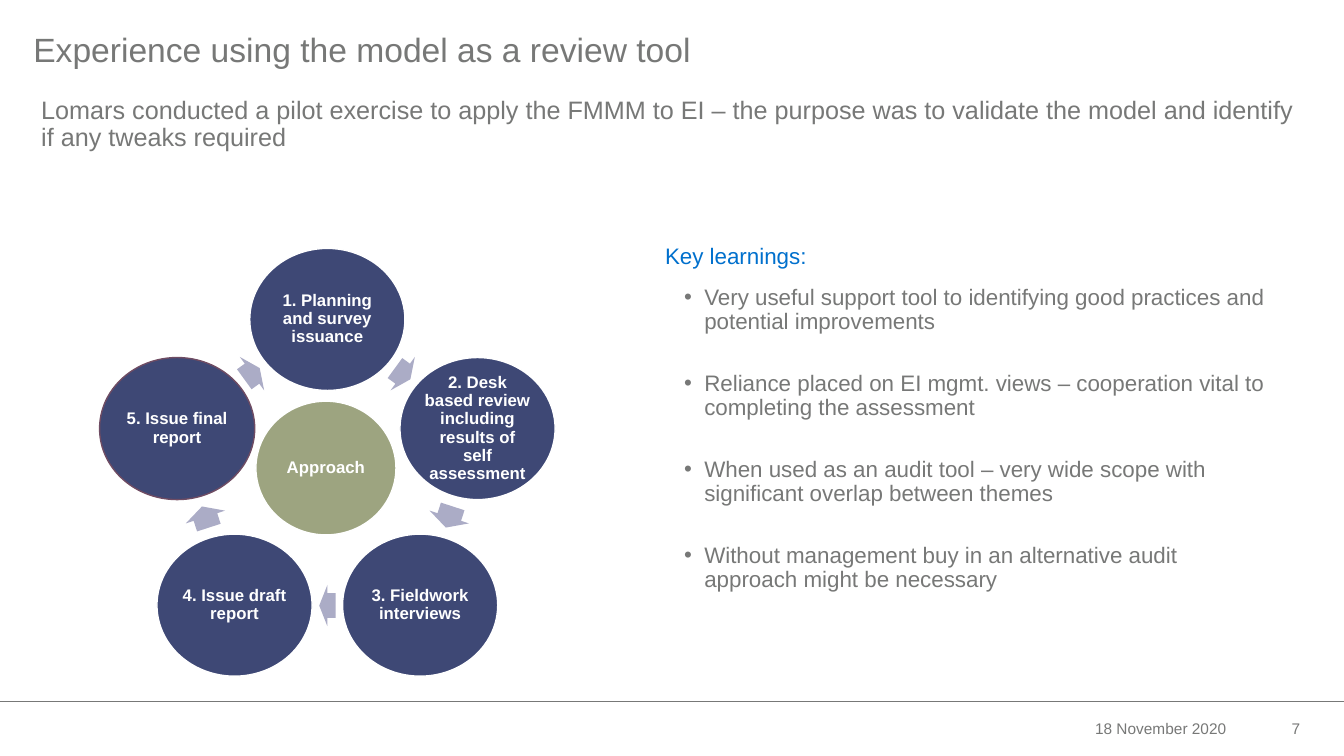
import dataclasses
import math

import pptx
import pptx.dml.color
import pptx.enum.shapes
import pptx.enum.text
import pptx.oxml
import pptx.oxml.ns
import pptx.util
from pptx.util import Cm

Align = pptx.enum.text.PP_ALIGN
Anchor = pptx.enum.text.MSO_ANCHOR
Preset = pptx.enum.shapes.MSO_SHAPE

GREY, BLUE, NAVY = "777877", "0070CD", "3E4875"
LILAC, SAGE, PLUM, WHITE = "ABACC6", "9DA480", "6F4C63", "FFFFFF"
SLIDE_WIDTH, SLIDE_HEIGHT = 33.87, 19.05
FOOTER_TOP, FOOTER_HEIGHT = 17.68, 1.35
CYCLE_X, CYCLE_Y = 8.25, 12.03
STEP_RADIUS, ARROW_RADIUS = 3.98, 3.23
STEP_WIDTH, STEP_HEIGHT = 3.91, 3.58
ARROW_HEIGHT = 1.04


@dataclasses.dataclass(frozen=True)
class Frame:
    """Position and size in centimetres."""
    left: float
    top: float
    width: float
    height: float

    def lengths(self) -> tuple:
        return Cm(self.left), Cm(self.top), Cm(self.width), Cm(self.height)


@dataclasses.dataclass(frozen=True)
class Line:
    """One paragraph and its format."""
    text: str
    size: float
    color: str = GREY
    bold: bool = False
    align: Align = Align.LEFT
    spacing: float = 0.9
    before: float = 0
    bullet: bool = False


@dataclasses.dataclass(frozen=True)
class Step:
    """A stage of the cycle and the length of the arrow that leaves it."""
    text: str
    arrow_length: float
    outline: str = WHITE


STEPS = [
    Step("1. Planning and survey issuance", 0.48),
    Step("2. Desk based review including results of self assessment", 0.56),
    Step("3. Fieldwork interviews", 0.41),
    Step("4. Issue draft report", 0.56),
    Step("5. Issue final report", 0.48, PLUM),
]
LEARNINGS = [
    "Very useful support tool to identifying good practices and potential improvements",
    "Reliance placed on EI mgmt. views – cooperation vital to completing the assessment",
    "When used as an audit tool – very wide scope with significant overlap between themes",
    "Without management buy in an alternative audit approach might be necessary",
]


def color(code: str) -> pptx.dml.color.RGBColor:
    return pptx.dml.color.RGBColor.from_string(code)


def apply(target, values: dict) -> None:
    for name, value in values.items():
        setattr(target, name, value)


def add_bullet(para) -> None:
    properties = para._p.get_or_add_pPr()
    properties.set("marL", str(Cm(0.99)))
    properties.set("indent", str(Cm(-0.51)))
    namespace = pptx.oxml.ns.nsdecls("a")
    for markup in (f'<a:buFont {namespace} typeface="Arial"/>',
                   f'<a:buChar {namespace} char="•"/>'):
        properties.append(pptx.oxml.parse_xml(markup))


def write(shape, lines: list[Line], insets: tuple, anchor: Anchor = Anchor.TOP) -> None:
    """Fill a shape with lines; insets are left, top, right, bottom in centimetres."""
    frame = shape.text_frame
    sides = ("margin_left", "margin_top", "margin_right", "margin_bottom")
    apply(frame, {"word_wrap": True, "vertical_anchor": anchor,
                  "auto_size": pptx.enum.text.MSO_AUTO_SIZE.NONE}
          | {side: Cm(inset) for side, inset in zip(sides, insets)})
    for index, line in enumerate(lines):
        para = frame.add_paragraph() if index else frame.paragraphs[0]
        if line.bullet:
            add_bullet(para)
        apply(para, {"alignment": line.align, "line_spacing": line.spacing,
                     "space_before": pptx.util.Pt(line.before)})
        span = para.add_run()
        span.text = line.text
        apply(span.font, {"name": "Arial", "size": pptx.util.Pt(line.size), "bold": line.bold})
        span.font.color.rgb = color(line.color)


def add_text(page, frame: Frame, lines: list[Line], insets: tuple,
             anchor: Anchor = Anchor.TOP) -> None:
    write(page.shapes.add_textbox(*frame.lengths()), lines, insets, anchor)


def add_preset(page, preset: Preset, frame: Frame, fill: str, outline: str | None = None):
    shape = page.shapes.add_shape(preset, *frame.lengths())
    shape.shadow.inherit = False
    shape.fill.solid()
    shape.fill.fore_color.rgb = color(fill)
    if outline:
        shape.line.color.rgb = color(outline)
        shape.line.width = pptx.util.Pt(1)
    else:
        shape.line.fill.background()
    return shape


def add_circle(page, frame: Frame, text: str, fill: str, outline: str = WHITE) -> None:
    circle = add_preset(page, Preset.OVAL, frame, fill, outline)
    label = Line(text, 12, WHITE, bold=True, align=Align.CENTER)
    write(circle, [label], (0.05,) * 4, Anchor.MIDDLE)


def cycle_frame(angle: float, radius: float, width: float, height: float) -> Frame:
    """Centre a frame on the cycle, with the angle in degrees clockwise from the top."""
    turn = math.radians(angle)
    return Frame(CYCLE_X + radius * math.sin(turn) - width / 2,
                 CYCLE_Y - radius * math.cos(turn) - height / 2, width, height)


def add_cycle(page) -> None:
    sector = 360 / len(STEPS)
    for index, step in enumerate(STEPS):
        angle = index * sector
        add_circle(page, cycle_frame(angle, STEP_RADIUS, STEP_WIDTH, STEP_HEIGHT),
                   step.text, NAVY, step.outline)
        angle += sector / 2
        arrow = add_preset(page, Preset.RIGHT_ARROW, cycle_frame(
            angle, ARROW_RADIUS, step.arrow_length, ARROW_HEIGHT), LILAC)
        arrow.adjustments[0] = 0.6
        arrow.rotation = angle
    add_circle(page, Frame(6.45, 10.11, 3.53, 3.37), "Approach", SAGE)


def add_footer(page) -> None:
    rule = page.shapes.add_connector(
        pptx.enum.shapes.MSO_CONNECTOR.STRAIGHT,
        Cm(0), Cm(FOOTER_TOP), Cm(SLIDE_WIDTH), Cm(FOOTER_TOP))
    rule.line.color.rgb = color(GREY)
    rule.line.width = pptx.util.Pt(0.5)
    rule._element.spPr.append(
        pptx.oxml.parse_xml(f'<a:effectLst {pptx.oxml.ns.nsdecls("a")}/>'))
    for text, left, width in (("18 November 2020", 23.01, 8.15), ("7", 29.34, 3.68)):
        add_text(page, Frame(left, FOOTER_TOP, width, FOOTER_HEIGHT),
                 [Line(text, 11, align=Align.RIGHT, spacing=1.0)],
                 (0.25, 0.13, 0.25, 0.13), Anchor.MIDDLE)


def add_headings(page) -> None:
    insets = (0, 0, 0, 0.2)
    title = page.shapes.title
    places = ("left", "top", "width", "height")
    apply(title, dict(zip(places, Frame(0.84, 0.84, 21.21, 0.99).lengths())))
    write(title, [Line("Experience using the model as a review tool", 24)], insets)
    add_text(page, Frame(1.04, 2.46, 31.83, 2.01), [Line(
        "Lomars conducted a pilot exercise to apply the FMMM to EI – the purpose was "
        "to validate the model and identify if any tweaks required", 18)], insets)


def add_learnings(page) -> None:
    lines = [Line("Key learnings:", 16, BLUE)]
    lines += [Line(text, 16, before=27 if index else 12, bullet=True)
              for index, text in enumerate(LEARNINGS)]
    add_text(page, Frame(16.76, 5.97, 15.27, 10.08), lines, (0, 0.2, 0, 0.2))


def main() -> None:
    deck = pptx.Presentation()
    apply(deck, {"slide_width": Cm(SLIDE_WIDTH), "slide_height": Cm(SLIDE_HEIGHT)})
    page = deck.slides.add_slide(deck.slide_layouts.get_by_name("Title Only"))
    add_footer(page)
    add_headings(page)
    add_cycle(page)
    add_learnings(page)
    deck.save("out.pptx")


if __name__ == "__main__":
    main()
